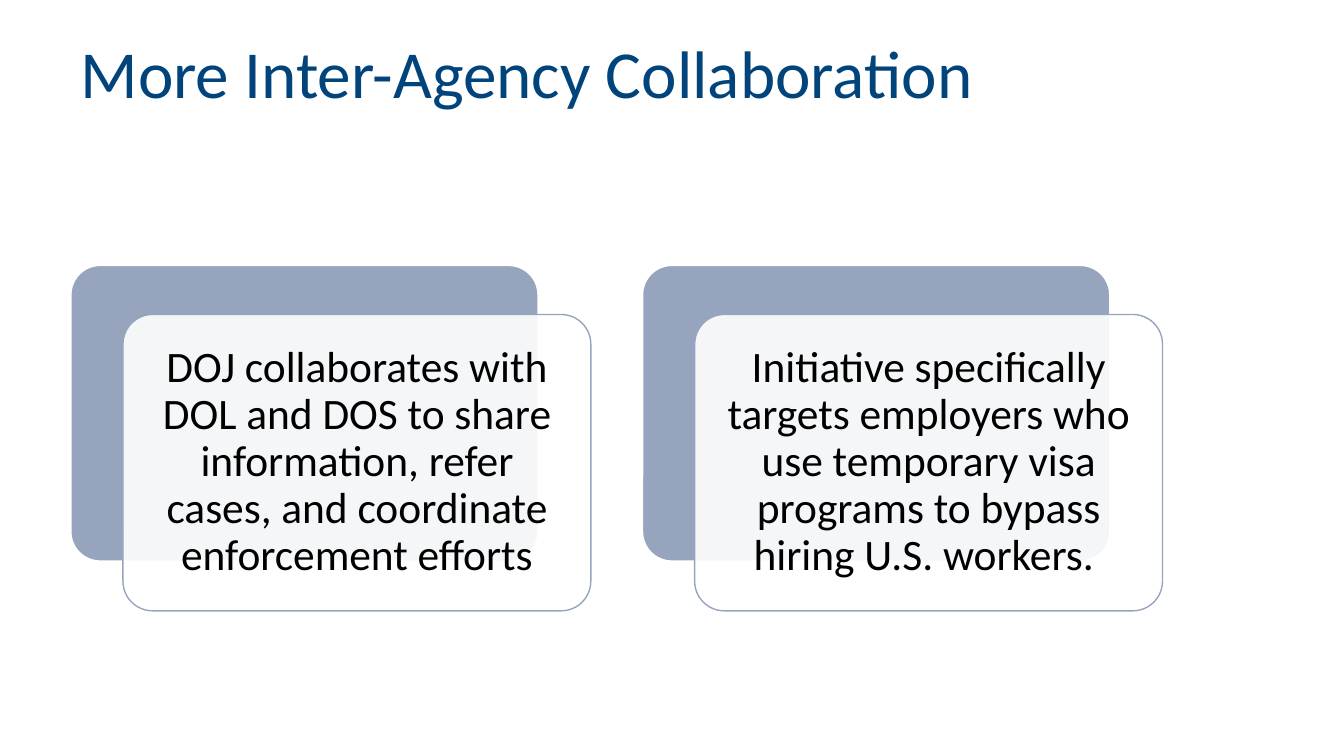
from lxml import etree
from pptx import Presentation
from pptx.dml.color import RGBColor
from pptx.enum.shapes import MSO_SHAPE
from pptx.enum.text import MSO_ANCHOR, PP_ALIGN
from pptx.oxml.ns import qn
from pptx.util import Inches, Pt

ROUNDED = MSO_SHAPE.ROUNDED_RECTANGLE
MIDDLE = MSO_ANCHOR.MIDDLE
LEFT, CENTER = PP_ALIGN.LEFT, PP_ALIGN.CENTER

COLORS = {"title": "00447B", "panel": "97A4BE", "white": "FFFFFF", "text": "000000"}
FONT = "Calibri"
CARD_TEXTS = [
    "DOJ collaborates with DOL and DOS to share information, refer cases, "
    "and coordinate enforcement efforts",
    "Initiative specifically targets employers who use temporary visa programs "
    "to bypass hiring U.S. workers. ",
]
CARD_LEFT, CARD_TOP, CARD_WIDTH, CARD_HEIGHT = 0.7, 2.63, 4.64, 2.94
CARD_STEP = 5.67
OFFSET_X, OFFSET_Y = 0.52, 0.49


def add_card(page, left, top, fill, line, line_width):
    card = page.shapes.add_shape(
        ROUNDED, Inches(left), Inches(top), Inches(CARD_WIDTH), Inches(CARD_HEIGHT))
    card.adjustments[0] = 0.1
    card.shadow.inherit = False
    card.fill.solid()
    card.fill.fore_color.rgb = RGBColor.from_string(COLORS[fill])
    card.line.color.rgb = RGBColor.from_string(COLORS[line])
    card.line.width = Pt(line_width)
    return card


def write_text(frame, text, size, color, align):
    frame.text = text
    frame.word_wrap = True
    frame.vertical_anchor = MIDDLE
    para = frame.paragraphs[0]
    para.alignment = align
    para.line_spacing = 0.9
    font = para.runs[0].font
    font.name = FONT
    font.size = Pt(size)
    font.color.rgb = RGBColor.from_string(COLORS[color])


deck = Presentation()
deck.slide_width, deck.slide_height = Inches(13.33), Inches(7.5)
page = deck.slides.add_slide(deck.slide_layouts[5])

# Title
title = page.shapes.title
title.left, title.top = Inches(0.7), Inches(0.22)
title.width, title.height = Inches(10.82), Inches(1.09)
write_text(title.text_frame, "More Inter-Agency Collaboration", 48, "title", LEFT)

# Cards: a solid panel with a translucent text card offset over it
for index, text in enumerate(CARD_TEXTS):
    left = CARD_LEFT + index * CARD_STEP
    add_card(page, left, CARD_TOP, "panel", "white", 1.5)
    card = add_card(page, left + OFFSET_X, CARD_TOP + OFFSET_Y, "white", "panel", 1)
    fill_color = card.fill._xPr.find(qn("a:solidFill"))[0]
    etree.SubElement(fill_color, qn("a:alpha"), val="90000")

    frame = card.text_frame
    frame.margin_left = frame.margin_right = Inches(0.13)
    frame.margin_top = frame.margin_bottom = Inches(0.13)
    write_text(frame, text, 31, "text", CENTER)

deck.save("out.pptx")
